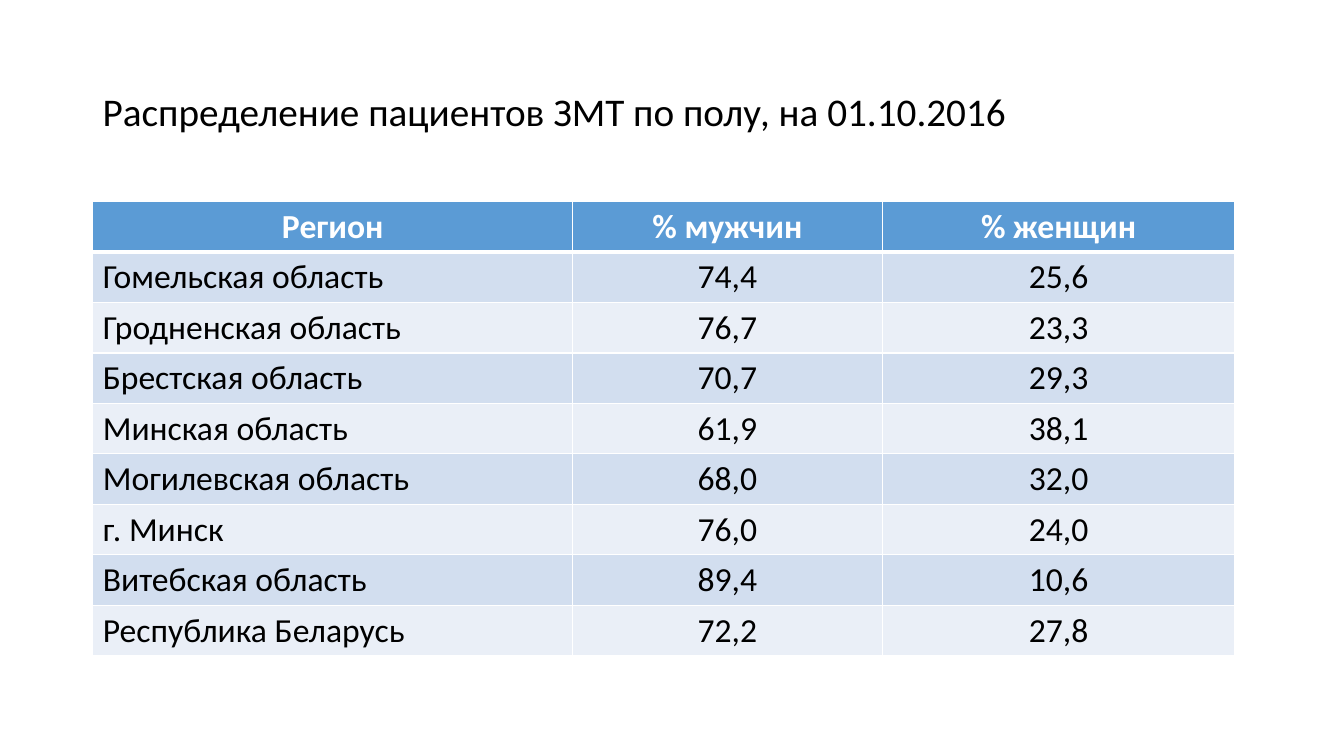
"""Build a slide with a table of patients by region and sex."""
from lxml import etree
from pptx import Presentation
from pptx import util as u
from pptx.dml.color import RGBColor
from pptx.enum import text
from pptx.oxml.ns import qn

COLORS = {"header": "5B9BD5", "odd": "D2DEEF", "even": "EAEFF7",
          "white": "FFFFFF", "black": "000000"}
FONT = "Calibri"
COLUMN_WIDTHS = [4.76, 3.07, 3.5]
TABLE_HEIGHT = 4.5
LEFT = 0.92
ROWS = [
    ("Регион", "% мужчин", "% женщин"),
    ("Гомельская область", "74,4", "25,6"),
    ("Гродненская область", "76,7", "23,3"),
    ("Брестская область", "70,7", "29,3"),
    ("Минская область", "61,9", "38,1"),
    ("Могилевская область", "68,0", "32,0"),
    ("г. Минск", "76,0", "24,0"),
    ("Витебская область", "89,4", "10,6"),
    ("Республика Беларусь", "72,2", "27,8"),
]


def add_run(paragraph, words, size, color, bold=False):
    run = paragraph.add_run()
    run.text = words
    run.font.name = FONT
    run.font.size = u.Pt(size)
    run.font.bold = bold
    run.font.color.rgb = RGBColor.from_string(COLORS[color])


def add_border(cell, side, points):
    line = etree.SubElement(cell._tc.get_or_add_tcPr(), qn(f"a:ln{side}"), w=str(u.Pt(points)))
    fill = etree.SubElement(line, qn("a:solidFill"))
    etree.SubElement(fill, qn("a:srgbClr"), val=COLORS["white"])


presentation = Presentation()
presentation.slide_width = u.Inches(13.33)
presentation.slide_height = u.Inches(7.5)
slide = presentation.slides.add_slide(presentation.slide_layouts[6])

title = slide.shapes.add_textbox(u.Inches(LEFT), u.Inches(0.4), u.Inches(11.5), u.Inches(1.45))
title.text_frame.word_wrap = True
title.text_frame.vertical_anchor = text.MSO_ANCHOR.MIDDLE
title_paragraph = title.text_frame.paragraphs[0]
title_paragraph.line_spacing = 0.9
add_run(title_paragraph, "Распределение пациентов ЗМТ по полу, на 01.10.2016", 28, "black")

table = slide.shapes.add_table(
    len(ROWS), len(COLUMN_WIDTHS), u.Inches(LEFT), u.Inches(2),
    u.Inches(sum(COLUMN_WIDTHS)), u.Inches(TABLE_HEIGHT)).table
for column, width in zip(table.columns, COLUMN_WIDTHS):
    column.width = u.Inches(width)

for row_index, row in enumerate(ROWS):
    is_header = row_index == 0
    band = "header" if is_header else "odd" if row_index % 2 else "even"
    for column_index, words in enumerate(row):
        cell = table.cell(row_index, column_index)
        for side in "LRTB":
            under_header = (row_index, side) in [(0, "B"), (1, "T")]
            add_border(cell, side, 3 if under_header else 1)
        cell.fill.solid()
        cell.fill.fore_color.rgb = RGBColor.from_string(COLORS[band])
        paragraph = cell.text_frame.paragraphs[0]
        if is_header or column_index:
            paragraph.alignment = text.PP_ALIGN.CENTER
        add_run(paragraph, words, 24, "white" if is_header else "black", is_header)

presentation.save("out.pptx")
